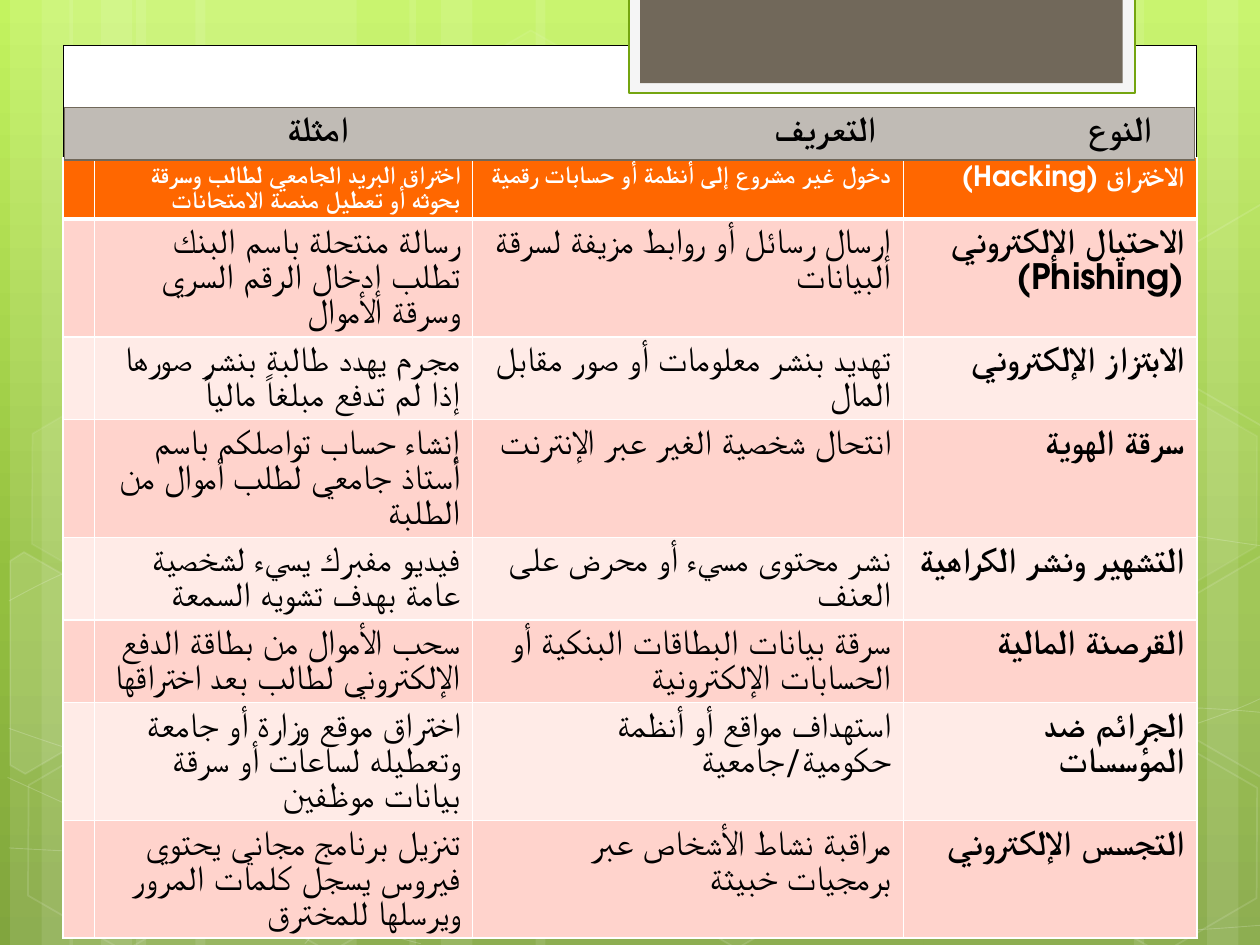
from copy import deepcopy
from math import cos, radians, sin
from pptx import Presentation
from pptx.dml.color import RGBColor as RGB
from pptx.enum.shapes import MSO_SHAPE as Kind
from pptx.enum.text import PP_ALIGN as Align
from pptx.oxml.ns import qn
from pptx.oxml.xmlchemy import OxmlElement as Node
from pptx.util import Inches, Pt

FONT = "TeX Gyre Adventor"
WHITE, BLACK, BROWN = "FFFFFF", "000000", "71685A"
COLS, ROWS = 10, 7.5

BANDS = [(1.08, 1.75), (0.08, 0.5), (0.33, 0.83), (1.55, 1.75), (0.55, 0.5), (0.8, 0.83),
         (7.33, 1.75), (9.58, 0.5), (9, 0.83), (4.25, 3.08), (3.25, 0.5), (3.5, 0.83)]
CURVES = [
    [(0.07, 6.73), (0.61, 6.76), (1.15, 6.79), (1.9, 6.78), (2.65, 6.77), (3.58, 6.75),
     (4.58, 6.65), (5.58, 6.55), (7, 6.36), (7.92, 6.17), (8.83, 5.98), (9.77, 5.68), (10.07, 5.51)],
    [(0.07, 4.77), (0.36, 4.61), (0.65, 4.46), (1.21, 4.31), (1.78, 4.16), (2.59, 3.94),
     (3.47, 3.87), (4.36, 3.8), (5.44, 3.79), (6.54, 3.87), (7.64, 3.95), (9.47, 4.26), (10.07, 4.34)],
    [(0.06, 6.17), (1.27, 6.72), (2.47, 7.27), (3.34, 7.49)],
    [(0.07, 5.78), (0.38, 5.89), (0.7, 6), (1.28, 6.16), (1.86, 6.31), (2.73, 6.56), (3.57, 6.73),
     (4.4, 6.9), (5.45, 7.08), (6.28, 7.18), (7.11, 7.29), (8, 7.33), (8.53, 7.36),
     (9.05, 7.4), (9.19, 7.38), (9.45, 7.38), (9.71, 7.37), (9.89, 7.35), (10.07, 7.34)],
    [(2.42, 7.49), (2.6, 7.29), (2.78, 7.09), (3.02, 6.91), (3.26, 6.73), (3.6, 6.53), (3.88, 6.39),
     (4.16, 6.25), (4.33, 6.19), (4.7, 6.09), (5.06, 5.99), (5.73, 5.85), (6.08, 5.78),
     (6.44, 5.71), (6.49, 5.71), (6.8, 5.69), (7.11, 5.66), (7.6, 5.63), (7.94, 5.62),
     (8.29, 5.61), (8.86, 5.62), (8.86, 5.62), (9.08, 5.62), (9.31, 5.62), (9.53, 5.62),
     (9.71, 5.63), (9.88, 5.64), (10.06, 5.66)],
]
HEXES = [(3.34, 0.36, 4, 8), (4.97, 5.89, 6, 12), (0.11, 5.91, 0, 12), (0.14, 3.12, 7, 8),
         (1.74, 5.92, 0, 12), (7.53, 4.53, 10, 12), (8.34, 5.93, 0, 12), (8.34, 3.14, 7, 8)]
LEFT = [(0.08, 4.45), (0.19, 4.38), (0.96, 4.82), (0.95, 5.7), (0.2, 6.14), (0.08, 6.07)]
RIGHT = [(9.26, 4.85), (10.01, 4.41), (10.09, 4.46), (10.09, 6.13), (10.02, 6.17), (9.26, 5.73)]
CUTS = [(LEFT, (0.36, 5.35), 10), (RIGHT, (9.85, 5.2), 4),
        ([(x, y - 2.79) for x, y in RIGHT], (9.85, 2.41), 0)]

HEADS = ["النوع", "التعريف", "امثلة"]
CRIMES = [
    ("اختراق البريد الجامعي لطالب وسرقة بحوثه أو تعطيل منصة الامتحانات",
     "دخول غير مشروع إلى أنظمة أو حسابات رقمية", "الاختراق (Hacking)"),
    ("رسالة منتحلة باسم البنك تطلب إدخال الرقم السري وسرقة الأموال",
     "إرسال رسائل أو روابط مزيفة لسرقة البيانات", "الاحتيال الإلكتروني (Phishing)"),
    ("مجرم يهدد طالبة بنشر صورها إذا لم تدفع مبلغاً مالياً",
     "تهديد بنشر معلومات أو صور مقابل المال", "الابتزاز الإلكتروني"),
    ("إنشاء حساب تواصلكم باسم أستاذ جامعي لطلب أموال من الطلبة",
     "انتحال شخصية الغير عبر الإنترنت", "سرقة الهوية"),
    ("فيديو مفبرك يسيء لشخصية عامة بهدف تشويه السمعة",
     "نشر محتوى مسيء أو محرض على العنف", "التشهير ونشر الكراهية"),
    ("سحب الأموال من بطاقة الدفع الإلكتروني لطالب بعد اختراقها",
     "سرقة بيانات البطاقات البنكية أو الحسابات الإلكترونية", "القرصنة المالية"),
    ("اختراق موقع وزارة أو جامعة وتعطيله لساعات أو سرقة بيانات موظفين",
     "استهداف مواقع أو أنظمة حكومية/جامعية", "الجرائم ضد المؤسسات"),
    ("تنزيل برنامج مجاني يحتوي فيروس يسجل كلمات المرور ويرسلها للمخترق",
     "مراقبة نشاط الأشخاص عبر برمجيات خبيثة", "التجسس الإلكتروني"),
]


def tint(hue):
    return RGB.from_string(hue)


def make(tag, **marks):
    node = Node(tag)
    for name, mark in marks.items():
        node.set(name, str(mark))
    return node


def paint(shape, fill=None, clear=100, line=None, width=1, thin=100):
    shape.shadow.inherit = False
    for part, hue, share in ((shape.fill, fill, clear), (shape.line.fill, line, thin)):
        if not hue or not share:
            part.background()
            continue
        part.solid()
        part.fore_color.rgb = tint(hue)
        if share < 100:
            part._xPr.find(qn("a:solidFill"))[0].append(make("a:alpha", val=share * 1000))
    if line:
        shape.line.width = Pt(width)


def block(slide, box, kind=Kind.RECTANGLE, **look):
    shape = slide.shapes.add_shape(kind, *map(Inches, box))
    paint(shape, **look)
    return shape


def trace(slide, box, dots, close, **look):
    dots = [(Inches(box[0] + x), Inches(box[1] + y)) for x, y in dots]
    pen = slide.shapes.build_freeform(*dots[0], scale=1.0)
    pen.add_line_segments(dots[1:], close=close)
    shape = pen.convert_to_shape()
    paint(shape, **look)
    return shape


def bend(shape):
    lines = list(shape._element.iter(qn("a:lnTo")))
    for trio in zip(lines[::3], lines[1::3], lines[2::3]):
        curve = make("a:cubicBezTo")
        trio[0].addprevious(curve)
        for line in trio:
            curve.append(line[0])
            line.getparent().remove(line)


def turn(dots, mid, angle):
    c, s = cos(radians(angle)), sin(radians(angle))
    gaps = [(x - mid[0], y - mid[1]) for x, y in dots]
    return [(mid[0] + c * x - s * y, mid[1] + s * x + c * y) for x, y in gaps]


def wash(slide):
    fill = slide.background.fill
    fill.gradient()
    fill.gradient_angle = 270
    first = fill.gradient_stops[0]._gs
    first.addnext(deepcopy(first))
    for stop, hue, spot in zip(fill.gradient_stops, ("C3F35F", "93BF3F", "81A53E"), (0, 0.62, 1)):
        stop.color.rgb = tint(hue)
        stop.position = spot


def scene(slide, box):
    left, top, _, high = box
    for x, wide in BANDS:
        block(slide, (left + x, top, wide, high), fill=WHITE, clear=10)
    for knots in CURVES:
        bend(trace(slide, box, knots, False, line=WHITE, width=0.5, thin=20))
    for x, y, clear, thin in HEXES:
        shape = block(slide, (left + x, top + y, 1.75, 1.52), Kind.HEXAGON,
                      fill=WHITE, clear=clear, line=WHITE, thin=thin)
        shape.adjustments[0], shape.adjustments[1] = 0.285, 1.155
        shape.rotation = 30
    for dots, mid, clear in CUTS:
        shape = trace(slide, box, turn(dots, mid, -30), True,
                      fill=WHITE, clear=clear, line=WHITE, thin=12)
        shape.rotation = 30


def panel(slide, box):
    left, top, wide, _ = box
    block(slide, box, fill=WHITE, line=BLACK, width=0.5)
    tab = left + wide / 2 - 0.01, top - 0.38
    block(slide, (*tab, 4.02, 0.76), fill="F5F5F5", line="74A510", width=1.25)
    block(slide, (tab[0] + 0.09, tab[1], 3.83, 0.68), fill=BROWN)


def write(cell, text, size=20, hue=BLACK, bold=False, script=FONT, stops=()):
    para = cell.text_frame.paragraphs[0]
    para.alignment = Align.RIGHT
    para.line_spacing = Pt(size)
    props = para._p.get_or_add_pPr()
    props.set("rtl", "1")
    if stops:
        tabs = make("a:tabLst")
        for stop in stops:
            tabs.append(make("a:tab", pos=Inches(stop), algn="l"))
        props.append(tabs)
    run = para.add_run()
    run.text = text
    font = run.font
    font.name, font.size, font.bold = FONT, Pt(size), bold
    font.color.rgb = tint(hue)
    font._rPr.set("kern", "1200")
    if script:
        font._rPr.append(make("a:cs", typeface=script))


def style(cell, fill, edges):
    props = cell._tc.get_or_add_tcPr()
    for side, (hue, width) in edges.items():
        edge, solid = make("a:ln" + side, w=Pt(width)), make("a:solidFill")
        solid.append(make("a:srgbClr", val=hue))
        edge.append(solid)
        props.append(edge)
    cell.fill.solid()
    cell.fill.fore_color.rgb = tint(fill)


def grid(slide, box, wides, highs):
    table = slide.shapes.add_table(len(highs), len(wides), *map(Inches, box)).table
    table.first_row = table.horz_banding = False
    for col, wide in zip(table.columns, wides):
        col.width = Inches(wide)
    for row, high in zip(table.rows, highs):
        row.height = Inches(high)
    return table


def chart(slide, box):
    table = grid(slide, box, (0.25, 3, 3.42, 2.33), [0.47, 0.53] + [0.47] * 6)
    for r, crime in enumerate(CRIMES):
        fill = "FF6700" if r == 0 else ("FFEBE7", "FFD3CC")[r % 2]
        for c, text in enumerate(("", *crime)):
            cell = table.cell(r, c)
            edges = dict.fromkeys("LRTB", (WHITE, 1))
            if r < 2:
                edges["BT"[r]] = (WHITE, 3)
            style(cell, fill, edges)
            if text:
                size = 20 if r else 16 if c == 3 else 14
                write(cell, text, size=size, hue=BLACK if r else WHITE, bold=r == 0 or c == 3)


def header(slide, box):
    cell = grid(slide, box, box[2:3], box[3:]).cell(0, 0)
    style(cell, "C0BBB5", dict.fromkeys("LRTB", (BROWN, 0.75)))
    cell.margin_right = Inches(0.34)
    write(cell, "\t".join(HEADS), bold=True, script=None, stops=(3, 6.86))


def main():
    deck = Presentation()
    deck.slide_width, deck.slide_height = Inches(COLS), Inches(ROWS)
    slide = deck.slides.add_slide(deck.slide_layouts[6])
    wash(slide)
    scene(slide, (0, 0, COLS, ROWS))
    panel(slide, (0.5, 0.36, 9, 6.76))
    chart(slide, (0.5, 1.25, 9, 6.23))
    header(slide, (0.51, 0.85, 8.97, 0.42))
    deck.save("out.pptx")


if __name__ == "__main__":
    main()
